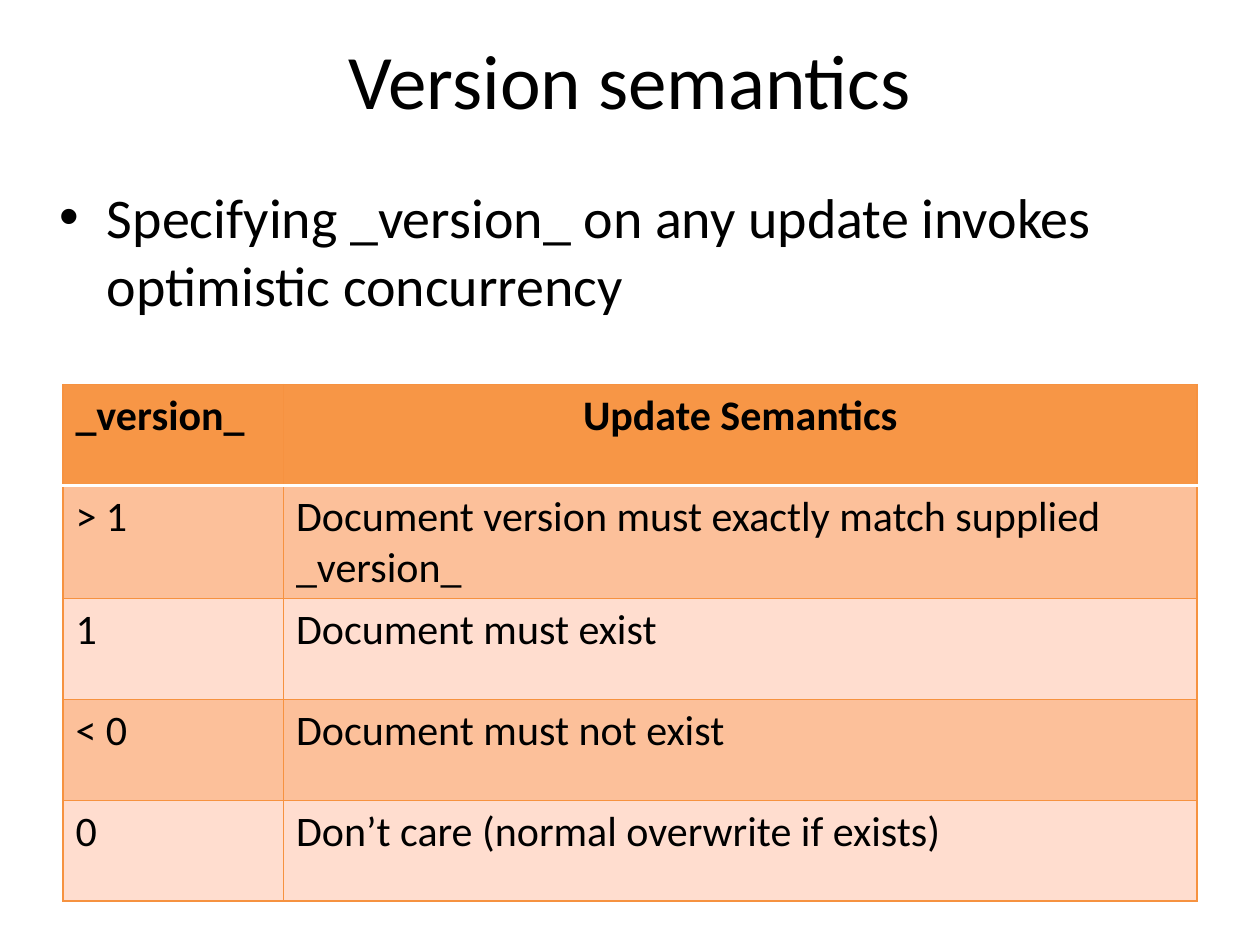
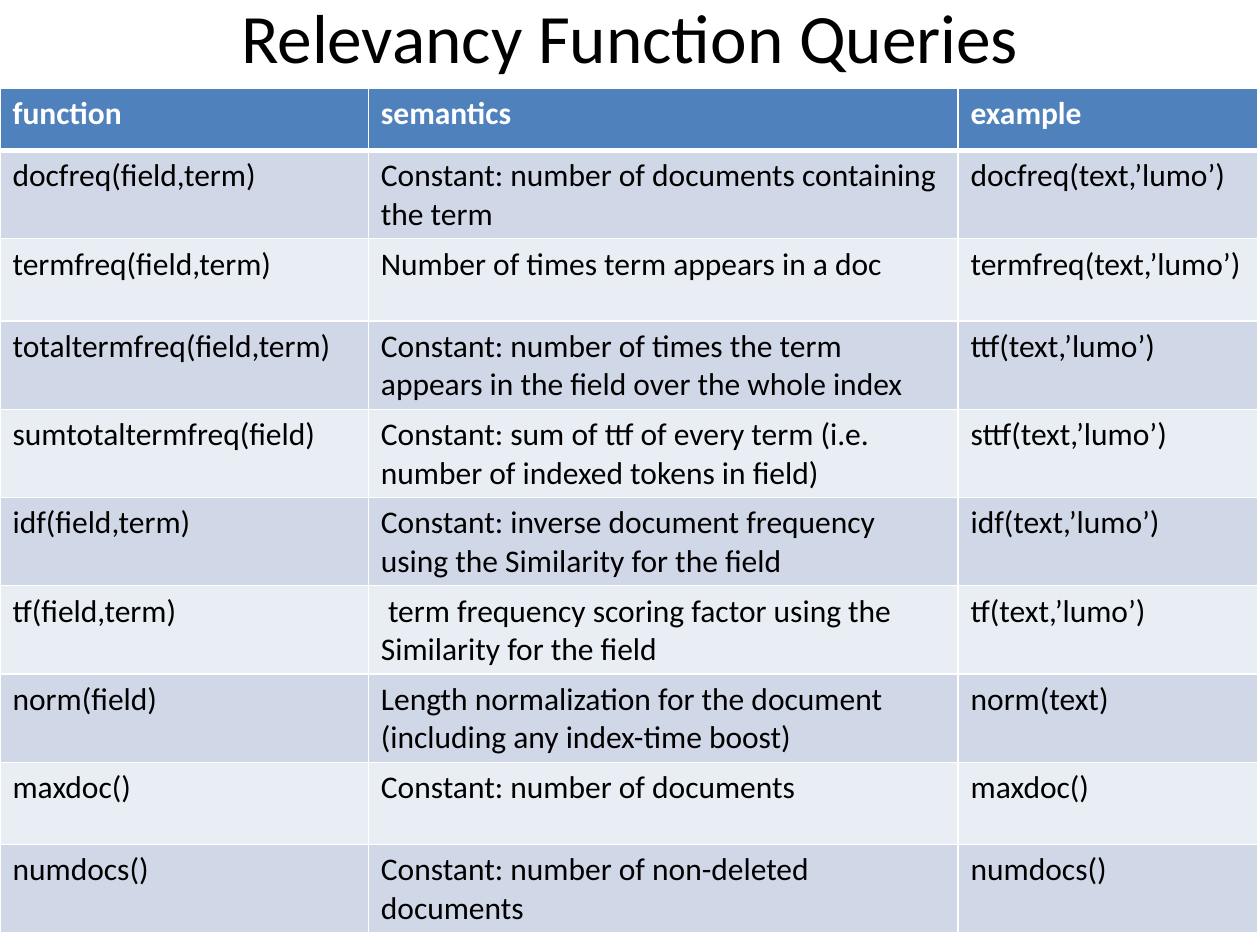
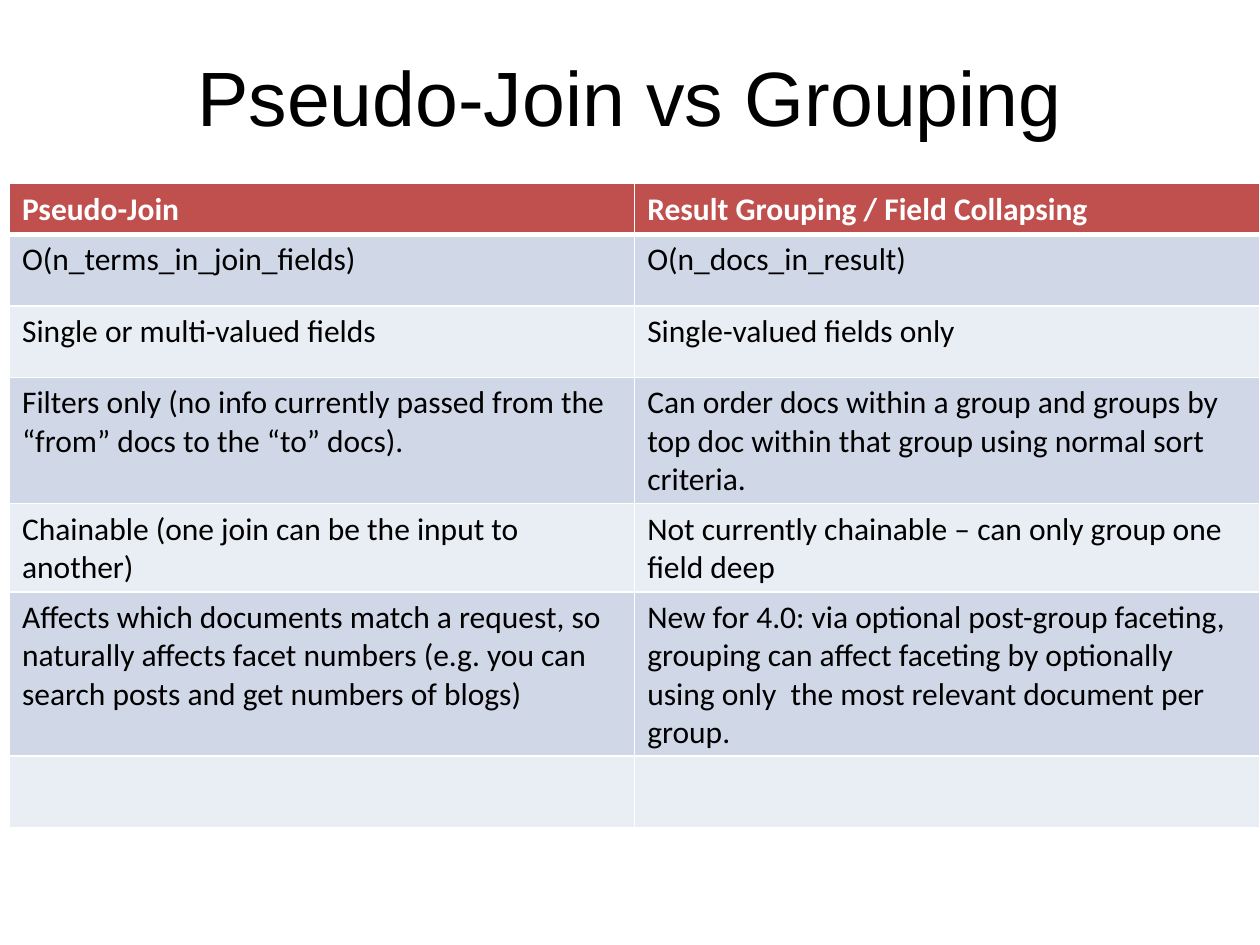
from dataclasses import dataclass

from lxml.etree import SubElement
from pptx import Presentation
from pptx.dml.color import RGBColor
from pptx.enum.text import MSO_ANCHOR, PP_ALIGN
from pptx.oxml.ns import qn
from pptx.util import Pt

BLACK, WHITE = "000000", "FFFFFF"
BODY_FONT = "Calibri"


@dataclass
class TableLook:
    header_fill: str
    header_text: str
    bands: tuple
    border: str
    border_width: float
    header_rule: float
    size: float


ORANGE = TableLook("F79646", BLACK, ("FCC09A", "FFDDCF"), "F69240", 0.75, 2, 24)
BLUE = TableLook("4F81BD", WHITE, ("D0D8E8", "E9EDF4"), WHITE, 1, 3, 18)
RED = TableLook("C0504D", WHITE, BLUE.bands, WHITE, 1, 3, 18)

VERSION_ROWS = [
    ("_version_", "Update Semantics"),
    ("> 1", "Document version must exactly match supplied _version_"),
    ("1", "Document must exist"),
    ("< 0", "Document must not exist"),
    ("0", "Don’t care (normal overwrite if exists)"),
]

FUNCTION_ROWS = [
    ("function", "semantics", "example"),
    ("docfreq(field,term)", "Constant: number of documents containing the term",
     "docfreq(text,’lumo’)"),
    ("termfreq(field,term)", "Number of times term appears in a doc",
     "termfreq(text,’lumo’)"),
    ("totaltermfreq(field,term)",
     "Constant: number of times the term appears in the field over the whole index",
     "ttf(text,’lumo’)"),
    ("sumtotaltermfreq(field)",
     "Constant: sum of ttf of every term (i.e. number of indexed tokens in field)",
     "sttf(text,’lumo’)"),
    ("idf(field,term)",
     "Constant: inverse document frequency using the Similarity for the field",
     "idf(text,’lumo’)"),
    ("tf(field,term)",
     " term frequency scoring factor using the Similarity for the field",
     "tf(text,’lumo’)"),
    ("norm(field)",
     "Length normalization for the document (including any index-time boost)",
     "norm(text)"),
    ("maxdoc()", "Constant: number of documents", "maxdoc()"),
    ("numdocs()", "Constant: number of non-deleted documents", "numdocs()"),
]

JOIN_ROWS = [
    ("Pseudo-Join", "Result Grouping / Field Collapsing"),
    ("O(n_terms_in_join_fields)", "O(n_docs_in_result)"),
    ("Single or multi-valued fields", "Single-valued fields only"),
    ("Filters only (no info currently passed from the “from” docs to the “to” docs).",
     "Can order docs within a group and groups by top doc within that group "
     "using normal sort criteria."),
    ("Chainable (one join can be the input to another)",
     "Not currently chainable – can only group one field deep"),
    ("Affects which documents match a request, so naturally affects facet numbers "
     "(e.g. you can search posts and get numbers of blogs)",
     "New for 4.0: via optional post-group faceting, grouping can affect faceting by "
     "optionally using only  the most relevant document per group."),
    ("", ""),
]


def rgb(color):
    return RGBColor.from_string(color)


def style_runs(paragraph, size, color=BLACK, font=BODY_FONT, bold=False):
    for run in paragraph.runs:
        run.font.name = font
        run.font.size = Pt(size)
        run.font.bold = bold
        run.font.color.rgb = rgb(color)


def add_text(slide, box, text, size, font=BODY_FONT):
    """Add a wrapped text box and return its text frame."""
    frame = slide.shapes.add_textbox(*map(Pt, box)).text_frame
    frame.word_wrap = True
    frame.text = text
    style_runs(frame.paragraphs[0], size, font=font)
    return frame


def add_title(slide, box, text, size=44, font=BODY_FONT):
    frame = add_text(slide, box, text, size, font)
    frame.vertical_anchor = MSO_ANCHOR.MIDDLE
    frame.paragraphs[0].alignment = PP_ALIGN.CENTER


def add_bullet(slide, box, text, size=32, indent=27):
    paragraph = add_text(slide, box, text, size).paragraphs[0]
    paragraph.space_before = Pt(size * 0.2)
    properties = paragraph._p.get_or_add_pPr()
    properties.set("marL", str(Pt(indent)))
    properties.set("indent", str(Pt(-indent)))
    SubElement(properties, qn("a:buFont"), typeface="Arial")
    SubElement(properties, qn("a:buChar"), char="•")


def draw_border(cell, side, color, width):
    line = SubElement(cell._tc.get_or_add_tcPr(), qn(f"a:ln{side}"), w=str(Pt(width)))
    SubElement(SubElement(line, qn("a:solidFill")), qn("a:srgbClr"), val=color)


def style_cell(cell, row, look):
    header = row == 0
    header_rule = (WHITE, look.header_rule)
    borders = dict.fromkeys("LRTB", (look.border, look.border_width))
    if header:
        borders["B"] = header_rule
    elif row == 1:
        borders["T"] = header_rule
    for side, (color, width) in borders.items():
        draw_border(cell, side, color, width)
    cell.fill.solid()
    cell.fill.fore_color.rgb = rgb(look.header_fill if header else look.bands[(row - 1) % 2])
    style_runs(cell.text_frame.paragraphs[0], look.size,
               look.header_text if header else BLACK, bold=header)


def add_grid(slide, origin, widths, heights, rows, look):
    """Add a banded table whose first row is the header."""
    extent = (sum(widths), sum(heights))
    table = slide.shapes.add_table(len(rows), len(widths), *map(Pt, origin + extent)).table
    table.horz_banding = False
    for column, width in zip(table.columns, widths):
        column.width = Pt(width)
    for r, (texts, height) in enumerate(zip(rows, heights)):
        table.rows[r].height = Pt(height)
        for c, text in enumerate(texts):
            cell = table.cell(r, c)
            cell.text_frame.text = text
            style_cell(cell, r, look)
    return table


def version_slide(slide):
    add_title(slide, (36, 9, 648, 72), "Version semantics")
    table = add_grid(slide, (36, 219.6), (126, 522), [57.6] * len(VERSION_ROWS),
                     VERSION_ROWS, ORANGE)
    table.cell(0, 1).text_frame.paragraphs[0].alignment = PP_ALIGN.CENTER
    add_bullet(slide, (27, 101, 657, 381.6),
               "Specifying _version_ on any update invokes optimistic concurrency")


def function_slide(slide):
    add_title(slide, (36, 0, 648, 40.5), "Relevancy Function Queries", 39.6)
    heights = [35.5] + [47] * (len(FUNCTION_ROWS) - 1)
    add_grid(slide, (0, 50.5), (210.5, 337, 171), heights, FUNCTION_ROWS, BLUE)


def join_slide(slide):
    add_title(slide, (36, 21.6, 648, 66), "Pseudo-Join vs Grouping", font="Arial")
    add_grid(slide, (5.4, 105), (357.3, 357.3), (20, 41, 41, 72, 50.4, 93.6, 41),
             JOIN_ROWS, RED)


def main():
    deck = Presentation()
    deck.slide_width, deck.slide_height = Pt(720), Pt(540)
    blank = deck.slide_layouts[6]
    for build in (version_slide, function_slide, join_slide):
        build(deck.slides.add_slide(blank))
    deck.save("out.pptx")


if __name__ == "__main__":
    main()
